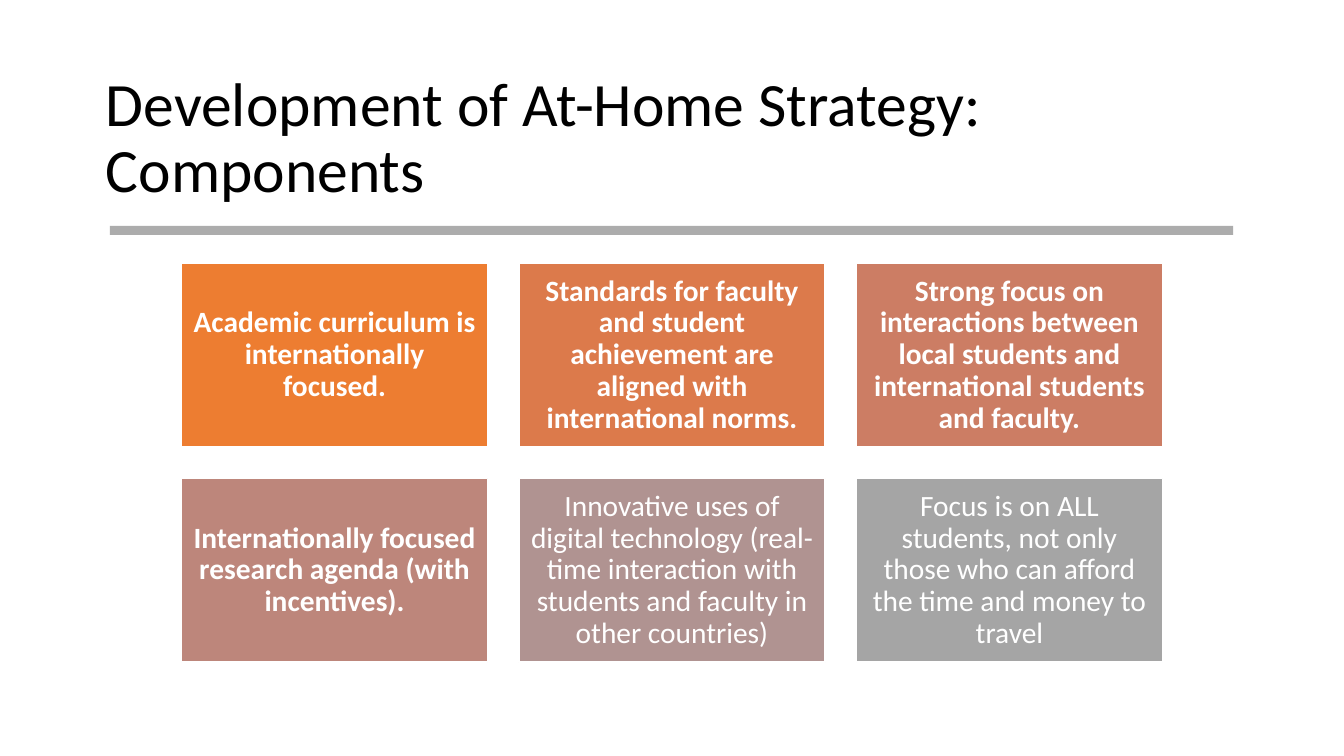
from lxml import etree
from pptx import Presentation
from pptx import util as u
from pptx.dml.color import RGBColor
from pptx.enum import shapes, text
from pptx.oxml.ns import qn

FONT = "Calibri"
COLUMNS = 3
GAP = 0.31
COMPONENTS = [
    ("Academic curriculum is internationally focused.", "ED7D31", True),
    ("Standards for faculty and student achievement are aligned with "
     "international norms.", "DC7A4B", True),
    ("Strong focus on interactions between local students and "
     "international students and faculty.", "CC7D64", True),
    ("Internationally focused research agenda (with incentives).", "BD867B", True),
    ("Innovative uses of digital technology (real-time interaction with "
     "students and faculty in other countries)", "B09391", False),
    ("Focus is on ALL students, not only those who can afford the time "
     "and money to travel", "A5A5A5", False),
]


def color(hex_value):
    return RGBColor.from_string(hex_value)


def inches(box):
    return [u.Inches(length) for length in box]


def write(frame, words, size, hex_value, align, bold=False):
    frame.text = words
    frame.word_wrap = True
    frame.auto_size = text.MSO_AUTO_SIZE.NONE
    frame.vertical_anchor = text.MSO_ANCHOR.MIDDLE
    paragraph = frame.paragraphs[0]
    paragraph.alignment = align
    paragraph.line_spacing = 0.9
    font = paragraph.runs[0].font
    font.name, font.size, font.bold = FONT, u.Pt(size), bold
    font.color.rgb = color(hex_value)


def add_block(slide, box, hex_value):
    block = slide.shapes.add_shape(shapes.MSO_SHAPE.RECTANGLE, *inches(box))
    block.shadow.inherit = False
    block.fill.solid()
    block.fill.fore_color.rgb = color(hex_value)
    return block


def add_heading(slide, box):
    title = slide.shapes.title
    title.left, title.top, title.width, title.height = inches(box)
    write(title.text_frame, "Development of At-Home Strategy: Components",
          44, "000000", text.PP_ALIGN.LEFT)


def add_divider(slide, box):
    divider = add_block(slide, box, "808080")
    divider.line.fill.background()
    tint = divider.fill._xPr.find(qn("a:solidFill"))[0]
    etree.SubElement(tint, qn("a:alpha"), val="65000")


def add_components(slide, box):
    left, top, width, height = box
    rows = len(COMPONENTS) // COLUMNS
    card_width = (width - GAP * (COLUMNS - 1)) / COLUMNS
    card_height = (height - GAP * (rows - 1)) / rows
    for index, (words, fill, bold) in enumerate(COMPONENTS):
        row, column = divmod(index, COLUMNS)
        card = add_block(slide, (left + column * (card_width + GAP),
                                 top + row * (card_height + GAP),
                                 card_width, card_height), fill)
        card.line.color.rgb = color("FFFFFF")
        card.line.width = u.Pt(1)
        frame = card.text_frame
        frame.margin_left = frame.margin_right = u.Inches(0.09)
        frame.margin_top = frame.margin_bottom = u.Inches(0.09)
        write(frame, words, 21, "FFFFFF", text.PP_ALIGN.CENTER, bold)


def main():
    deck = Presentation()
    deck.slide_width, deck.slide_height = inches((13.33, 7.5))
    slide = deck.slides.add_slide(deck.slide_layouts[5])
    add_heading(slide, (0.95, 0.66, 11.43, 1.45))
    add_divider(slide, (1.09, 2.24, 11.14, 0.09))
    add_components(slide, (1.8, 2.61, 9.73, 3.96))
    deck.save("out.pptx")


if __name__ == "__main__":
    main()
